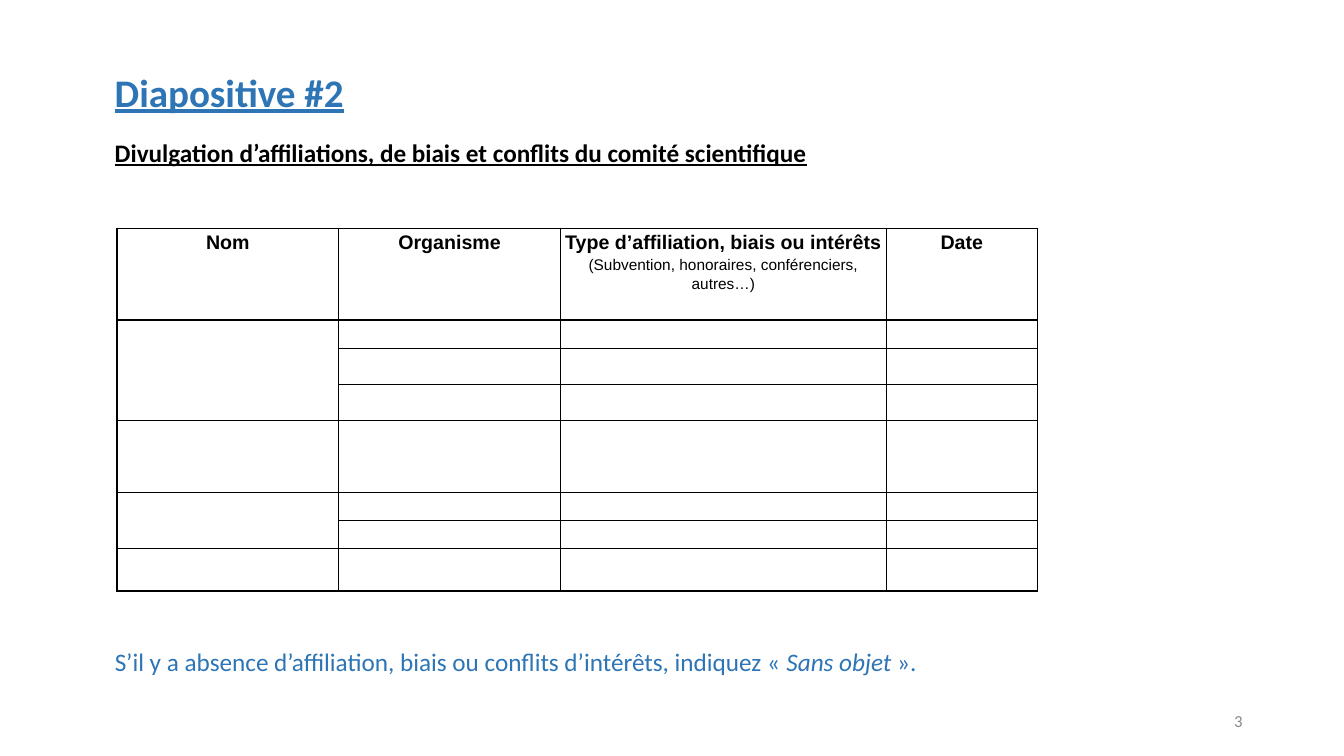
"""Build the slide disclosing affiliations of the scientific committee."""
from lxml import etree
from pptx import Presentation
from pptx import util as u
from pptx.dml import color
from pptx.enum import text
from pptx.oxml import ns

COLORS = {"blue": "2E75B5", "black": "000000", "gray": "888888"}
WIDTH, HEIGHT = u.Inches(13.33), u.Inches(7.5)
LEFT = 0.078

presentation = Presentation()
presentation.slide_width, presentation.slide_height = WIDTH, HEIGHT
slide = presentation.slides.add_slide(presentation.slide_layouts[6])


def add_box(left, top, width, height):
    """Add a wrapping text box placed by shares of the slide."""
    shape = slide.shapes.add_textbox(
        round(left * WIDTH), round(top * HEIGHT), round(width * WIDTH), round(height * HEIGHT))
    shape.text_frame.word_wrap = True
    return shape.text_frame


def format_runs(paragraph, name, size, tint, bold=False, underline=False):
    """Give every run of a paragraph the same font."""
    for run in paragraph.runs:
        font = run.font
        font.name, font.size = name, u.Pt(size)
        font.bold, font.underline = bold, underline
        font.color.rgb = color.RGBColor.from_string(COLORS[tint])


title = add_box(LEFT, 0.097, 0.647, 0.168)
title.margin_top = 0
title.text = "Diapositive #2\nDivulgation d’affiliations, de biais et conflits du comité scientifique"
for paragraph, size, tint in zip(title.paragraphs, (27.9, 18), ("blue", "black")):
    paragraph.line_spacing = 0.9
    format_runs(paragraph, "Calibri", size, tint, bold=True, underline=True)
title.paragraphs[1].space_before = u.Pt(18)

headers = ["Nom", "Organisme",
           "Type d’affiliation, biais ou intérêts\n(Subvention, honoraires, conférenciers, autres…)",
           "Date"]
column_widths = [2.2, 2.2, 3.23, 1.5]
row_heights = [0.91, 0.28, 0.36, 0.36, 0.71, 0.28, 0.28, 0.42]
table = slide.shapes.add_table(
    len(row_heights), len(column_widths), round(0.087 * WIDTH), round(0.302 * HEIGHT),
    u.Inches(sum(column_widths)), u.Inches(sum(row_heights))).table
table.first_row = table.horz_banding = False
for column, width in zip(table.columns, column_widths):
    column.width = u.Inches(width)
for row, height in zip(table.rows, row_heights):
    row.height = u.Inches(height)

for cell in table.iter_cells():
    cell.margin_left = cell.margin_right = u.Inches(0.03)
    cell.margin_top = cell.margin_bottom = 0
    properties = cell._tc.get_or_add_tcPr()
    for side in ("lnL", "lnR", "lnT", "lnB"):
        line = etree.SubElement(properties, ns.qn(f"a:{side}"), w=str(u.Pt(1)))
        fill = etree.SubElement(line, ns.qn("a:solidFill"))
        etree.SubElement(fill, ns.qn("a:srgbClr"), val=COLORS["black"])
    cell.fill.background()
    etree.SubElement(cell.text_frame.paragraphs[0]._p, ns.qn("a:endParaRPr"), sz="1000")

for column, header in enumerate(headers):
    cell = table.cell(0, column)
    cell.text = header
    for index, paragraph in enumerate(cell.text_frame.paragraphs):
        paragraph.alignment = text.PP_ALIGN.CENTER
        paragraph.line_spacing = 1.15
        format_runs(paragraph, "Arial", 11 if index else 14, "black", bold=index == 0)

for first, last in ((1, 3), (5, 6)):
    table.cell(first, 0).merge(table.cell(last, 0))

note = add_box(LEFT, 0.849, 0.686, 0.053).paragraphs[0]
for part in ("S’il y a absence d’affiliation, biais ou conflits d’intérêts, indiquez «\u00a0",
             "Sans objet", "\u00a0»."):
    note.add_run().text = part
format_runs(note, "Calibri", 18, "blue")
note.runs[1].font.italic = True

number = add_box(0.707, 0.927, 0.225, 0.053)
number.vertical_anchor = text.MSO_ANCHOR.MIDDLE
number.text = "3"
number.paragraphs[0].alignment = text.PP_ALIGN.RIGHT
format_runs(number.paragraphs[0], "Calibri", 12, "gray")

presentation.save("out.pptx")
